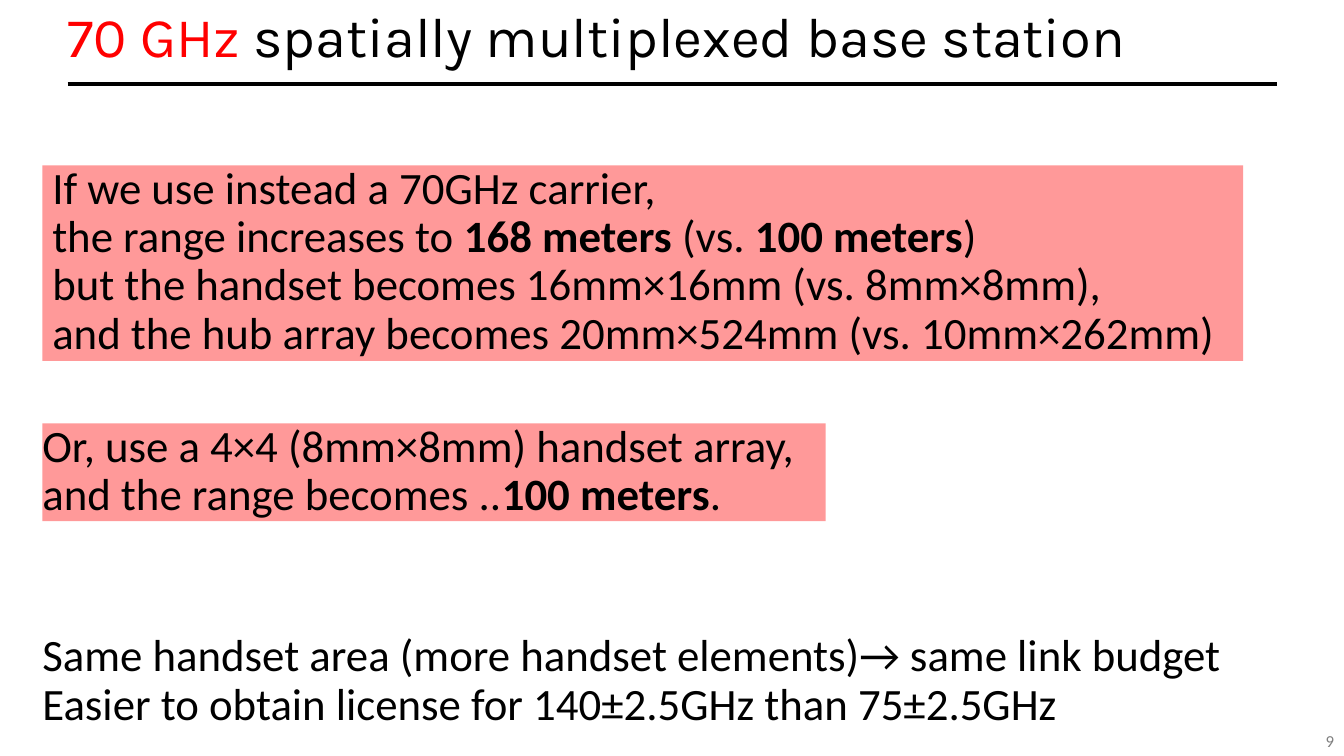
import pptx
import pptx.util
import pptx.dml.color
import pptx.enum.shapes
import pptx.enum.text
import pptx.oxml.ns
import lxml.etree

Inches = pptx.util.Inches
RGBColor = pptx.dml.color.RGBColor

BLACK = RGBColor(0x00, 0x00, 0x00)
RED = RGBColor(0xFF, 0x00, 0x00)
PINK = RGBColor(0xFF, 0x99, 0x99)
GRAY = RGBColor(0x7F, 0x7F, 0x7F)
BODY_FONT = "Calibri"
TITLE_FONT = "Karla"


def add_run(p, text, font, size, color, bold=False):
    r = p.add_run()
    r.text = text
    r.font.name = font
    r.font.size = pptx.util.Pt(size)
    r.font.color.rgb = color
    r.font.bold = bold


def set_frame(tf, anchor, inset=0):
    tf.word_wrap = True
    tf.vertical_anchor = anchor
    tf.margin_left = Inches(inset)
    tf.margin_right = tf.margin_top = tf.margin_bottom = 0


def add_title(slide, left, top, width, height, parts):
    """Title placeholder; parts are (text, color) pairs."""
    sp = slide.shapes.title
    sp.left, sp.top = Inches(left), Inches(top)
    sp.width, sp.height = Inches(width), Inches(height)
    tf = sp.text_frame
    tf.auto_size = pptx.enum.text.MSO_AUTO_SIZE.NONE
    set_frame(tf, pptx.enum.text.MSO_ANCHOR.MIDDLE)
    p = tf.paragraphs[0]
    p.alignment = pptx.enum.text.PP_ALIGN.LEFT
    p.line_spacing = 0.87
    for text, color in parts:
        add_run(p, text, TITLE_FONT, 40, color)


def add_rule(slide, left, top, width):
    """Horizontal line under the title."""
    cxn = slide.shapes.add_connector(
        pptx.enum.shapes.MSO_CONNECTOR.STRAIGHT,
        Inches(left), Inches(top), Inches(left + width), Inches(top))
    cxn.line.color.rgb = BLACK
    cxn.line.width = pptx.util.Pt(3)
    sp_pr = cxn._element.spPr
    lxml.etree.SubElement(sp_pr, pptx.oxml.ns.qn("a:effectLst"))


def add_statement(slide, left, top, width, height, lines, fill=None, inset=0):
    """Block of lines, each a list of (text, bold) pairs."""
    box = Inches(left), Inches(top), Inches(width), Inches(height)
    if fill is None:
        sp = slide.shapes.add_textbox(*box)
    else:
        sp = slide.shapes.add_shape(
            pptx.enum.shapes.MSO_SHAPE.RECTANGLE, *box)
        sp.shadow.inherit = False
        sp.fill.solid()
        sp.fill.fore_color.rgb = fill
        sp.line.fill.background()
    tf = sp.text_frame
    set_frame(tf, pptx.enum.text.MSO_ANCHOR.TOP, inset)
    p = tf.paragraphs[0]
    p.alignment = pptx.enum.text.PP_ALIGN.LEFT
    p.line_spacing = 0.9
    for i, line in enumerate(lines):
        if i:
            p.add_line_break()
        for text, bold in line:
            add_run(p, text, BODY_FONT, 32, BLACK, bold)


def add_page_number(slide, left, top, width, height, number):
    sp = slide.shapes.add_textbox(
        Inches(left), Inches(top), Inches(width), Inches(height))
    sp.text_frame.word_wrap = True
    p = sp.text_frame.paragraphs[0]
    p.alignment = pptx.enum.text.PP_ALIGN.RIGHT
    p.line_spacing = 0.9
    add_run(p, number, BODY_FONT, 12, GRAY)


def main():
    prs = pptx.Presentation()
    prs.slide_width, prs.slide_height = Inches(13.33), Inches(7.5)
    slide = prs.slides.add_slide(prs.slide_layouts[5])

    # Heading
    add_rule(slide, 0.67, 0.83, 12)
    add_title(slide, 0.67, 0.18, 11.92, 0.44, [
        ("70 GHz ", RED), ("spatially multiplexed base station", BLACK)])

    # Highlighted options
    add_statement(slide, 0.42, 1.64, 11.91, 1.94, [
        [("If we use instead a 70GHz carrier,", False)],
        [("the range increases to ", False), ("168 meters", True),
         (" (vs. ", False), ("100 meters", True), (")", False)],
        [("but the handset becomes 16mm×16mm (vs. 8mm×8mm),", False)],
        [("and the hub array becomes 20mm×524mm (vs. 10mm×262mm)", False)],
    ], PINK, inset=0.1)
    add_statement(slide, 0.42, 4.2, 7.77, 0.97, [
        [("Or, use a 4×4 (8mm×8mm) handset array,", False)],
        [("and the range becomes ..", False), ("100 meters", True),
         (".", False)],
    ], PINK)

    # Conclusion
    add_statement(slide, 0.42, 6.28, 12.75, 0.97, [
        [("Same handset area (more handset elements)→ same link budget",
          False)],
        [("Easier to obtain license for 140±2.5GHz than 75±2.5GHz", False)],
    ])

    add_page_number(slide, 12.56, 7.22, 0.77, 0.28, "9")
    prs.save("out.pptx")


if __name__ == "__main__":
    main()
